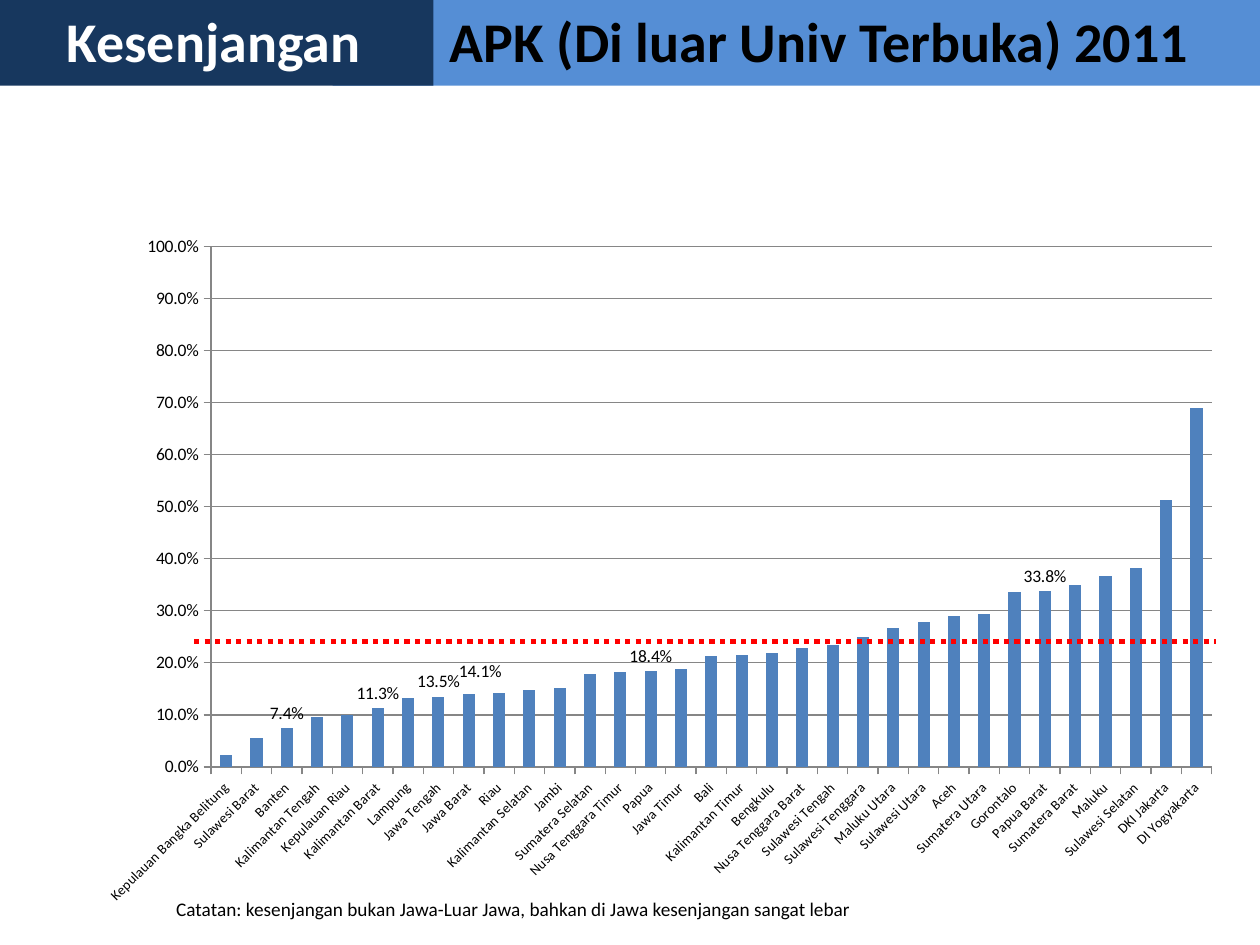
"""Build the slide on higher-education enrolment gaps between provinces."""
from dataclasses import dataclass

from lxml import etree
from pptx import Presentation
from pptx.chart.data import CategoryChartData
from pptx.dml.color import RGBColor
from pptx.enum.chart import XL_CHART_TYPE, XL_LABEL_POSITION, XL_TICK_MARK
from pptx.enum.dml import MSO_LINE
from pptx.enum.shapes import MSO_CONNECTOR, MSO_SHAPE
from pptx.enum.text import MSO_ANCHOR, MSO_AUTO_SIZE, PP_ALIGN
from pptx.oxml.ns import qn
from pptx.util import Inches, Pt

COLUMN_CLUSTERED = XL_CHART_TYPE.COLUMN_CLUSTERED
OUTSIDE_END = XL_LABEL_POSITION.OUTSIDE_END
TICK_OUTSIDE = XL_TICK_MARK.OUTSIDE
DOTTED = MSO_LINE.ROUND_DOT
STRAIGHT = MSO_CONNECTOR.STRAIGHT
RECTANGLE = MSO_SHAPE.RECTANGLE
MIDDLE = MSO_ANCHOR.MIDDLE
FIT_SHAPE = MSO_AUTO_SIZE.SHAPE_TO_FIT_TEXT
LEFT = PP_ALIGN.LEFT
TITLE_ONLY = 5
PERCENT = "0.0%"

ENROLMENT = {
    "Kepulauan Bangka Belitung": 0.023, "Sulawesi Barat": 0.056, "Banten": 0.074,
    "Kalimantan Tengah": 0.096, "Kepulauan Riau": 0.099, "Kalimantan Barat": 0.113,
    "Lampung": 0.133, "Jawa Tengah": 0.135, "Jawa Barat": 0.141, "Riau": 0.142,
    "Kalimantan Selatan": 0.147, "Jambi": 0.151, "Sumatera Selatan": 0.178,
    "Nusa Tenggara Timur": 0.182, "Papua": 0.184, "Jawa Timur": 0.189, "Bali": 0.213,
    "Kalimantan Timur": 0.214, "Bengkulu": 0.219, "Nusa Tenggara Barat": 0.228,
    "Sulawesi Tengah": 0.234, "Sulawesi Tenggara": 0.250, "Maluku Utara": 0.266,
    "Sulawesi Utara": 0.279, "Aceh": 0.290, "Sumatera Utara": 0.294, "Gorontalo": 0.336,
    "Papua Barat": 0.338, "Sumatera Barat": 0.350, "Maluku": 0.367,
    "Sulawesi Selatan": 0.383, "DKI Jakarta": 0.513, "DI Yogyakarta": 0.690,
}
LABELLED = ("Banten", "Kalimantan Barat", "Jawa Tengah", "Jawa Barat", "Papua", "Papua Barat")
LABEL_SHIFTS = {"Jawa Barat": (0.01, -0.01)}


@dataclass(frozen=True)
class Theme:
    """Colours, font and type sizes of the slide."""
    font: str = "Calibri"
    black: RGBColor = RGBColor(0x00, 0x00, 0x00)
    white: RGBColor = RGBColor(0xFF, 0xFF, 0xFF)
    navy: RGBColor = RGBColor(0x17, 0x37, 0x5E)
    sky: RGBColor = RGBColor(0x55, 0x8E, 0xD5)
    column: RGBColor = RGBColor(0x4F, 0x81, 0xBD)
    average: RGBColor = RGBColor(0xFF, 0x00, 0x00)
    grid: RGBColor = RGBColor(0x86, 0x86, 0x86)
    title_size: Pt = Pt(32)
    note_size: Pt = Pt(11)
    chart_size: Pt = Pt(10)
    category_size: Pt = Pt(8)


class SlideBuilder:
    """Draw styled elements on one slide."""

    def __init__(self, slide, theme):
        self.slide = slide
        self.theme = theme

    def style(self, font, size, color, bold=False):
        """Apply the theme font with a size and colour."""
        font.name = self.theme.font
        font.size = size
        font.bold = bold
        font.color.rgb = color

    def band(self, left, width, height, color):
        """Add a plain filled band at the top edge."""
        shape = self.slide.shapes.add_shape(
            RECTANGLE, Inches(left), 0, Inches(width), Inches(height))
        shape.shadow.inherit = False
        shape.fill.solid()
        shape.fill.fore_color.rgb = color
        shape.line.fill.background()

    def title(self, topic, subject, left, top, width, height, indent, tab):
        """Place the two-colour title in front of the bands."""
        shape = self.slide.shapes.title
        shape.left, shape.top = Inches(left), Inches(top)
        shape.width, shape.height = Inches(width), Inches(height)
        shape.element.getparent().append(shape.element)
        frame = shape.text_frame
        frame.word_wrap = True
        frame.auto_size = FIT_SHAPE
        frame.vertical_anchor = MIDDLE
        frame.margin_left = Inches(indent)
        paragraph = frame.paragraphs[0]
        paragraph.alignment = LEFT
        properties = paragraph._p.get_or_add_pPr()
        tabs = etree.SubElement(properties, qn("a:tabLst"))
        etree.SubElement(tabs, qn("a:tab"), pos=str(Inches(tab)), algn="l")
        for text, color in ((topic, self.theme.white), ("\t" + subject, self.theme.black)):
            run = paragraph.add_run()
            run.text = text
            self.style(run.font, self.theme.title_size, color, bold=True)

    def note(self, text, left, top, width, height):
        """Add a one-line note."""
        shape = self.slide.shapes.add_textbox(
            Inches(left), Inches(top), Inches(width), Inches(height))
        frame = shape.text_frame
        frame.word_wrap = False
        frame.auto_size = FIT_SHAPE
        frame.text = text
        run = frame.paragraphs[0].runs[0]
        self.style(run.font, self.theme.note_size, self.theme.black)

    def average_line(self, left, right, top):
        """Add the dotted horizontal line across the columns."""
        connector = self.slide.shapes.add_connector(
            STRAIGHT, Inches(left), Inches(top), Inches(right), Inches(top))
        connector.line.color.rgb = self.theme.average
        connector.line.width = Pt(3)
        connector.line.dash_style = DOTTED
        etree.SubElement(connector.element.spPr, qn("a:effectLst"))

    def column_chart(self, values, labelled, left, top, width, height, plot_area):
        """Add the column chart with labels on chosen categories."""
        data = CategoryChartData(number_format=PERCENT)
        data.categories = list(values)
        data.add_series("Series 1", list(values.values()))
        chart = self.slide.shapes.add_chart(
            COLUMN_CLUSTERED, Inches(left), Inches(top),
            Inches(width), Inches(height), data).chart
        chart.has_legend = False
        chart.has_title = False
        self.style(chart.font, self.theme.chart_size, self.theme.black)
        area = chart.element.chart.plotArea
        for old in area.findall(qn("c:layout")):
            area.remove(old)
        frame = [("layoutTarget", "inner"), ("xMode", "edge"), ("yMode", "edge")]
        self.place(area, 0, frame + list(zip("xywh", plot_area)))
        self.format_axes(chart)
        plot = chart.plots[0]
        plot.gap_width = 150
        plot.vary_by_categories = False
        series = plot.series[0]
        series.format.fill.solid()
        series.format.fill.fore_color.rgb = self.theme.column
        series.data_labels.show_value = False
        names = list(values)
        for name in labelled:
            label = series.points[names.index(name)].data_label
            label.position = OUTSIDE_END
            if name in LABEL_SHIFTS:
                self.place(label._dLbl, 1, zip("xy", LABEL_SHIFTS[name]))

    def place(self, parent, index, settings):
        """Insert a manual layout in fractions of the chart."""
        layout = etree.Element(qn("c:layout"))
        parent.insert(index, layout)
        manual = etree.SubElement(layout, qn("c:manualLayout"))
        for tag, value in settings:
            etree.SubElement(manual, qn("c:" + tag), val=str(value))

    def format_axes(self, chart):
        """Style both axes and the gridlines."""
        value_axis, category_axis = chart.value_axis, chart.category_axis
        value_axis.minimum_scale = 0
        value_axis.maximum_scale = 1
        value_axis.major_unit = 0.1
        value_axis.has_major_gridlines = True
        value_axis.tick_labels.number_format = PERCENT
        value_axis.tick_labels.number_format_is_linked = False
        value_axis.major_gridlines.format.line.color.rgb = self.theme.grid
        sizes = ((value_axis, self.theme.chart_size), (category_axis, self.theme.category_size))
        for axis, size in sizes:
            axis.major_tick_mark = TICK_OUTSIDE
            axis.format.line.color.rgb = self.theme.grid
            self.style(axis.tick_labels.font, size, self.theme.black)
        body = category_axis._element.find(qn("c:txPr")).find(qn("a:bodyPr"))
        body.set("rot", "-2700000")
        body.set("vert", "horz")


def main():
    """Build and save the presentation."""
    presentation = Presentation()
    presentation.slide_width, presentation.slide_height = Inches(10), Inches(7.5)
    slide = presentation.slides.add_slide(presentation.slide_layouts[TITLE_ONLY])
    theme = Theme()
    builder = SlideBuilder(slide, theme)
    builder.column_chart(ENROLMENT, LABELLED, 0.67, 1.79, 9.13, 5.51, (0.11, 0.03, 0.87, 0.75))
    builder.average_line(1.54, 9.65, 5.09)
    builder.note("Catatan: kesenjangan bukan Jawa-Luar Jawa, bahkan di Jawa kesenjangan sangat lebar",
                 1.3, 7.07, 6.3, 0.29)
    builder.band(2.64, 7.36, 0.68, theme.sky)
    builder.band(0, 3.44, 0.68, theme.navy)
    builder.title("Kesenjangan", "APK (Di luar Univ Terbuka) 2011",
                  -0.03, 0, 10.04, 0.64, indent=0.56, tab=3.04)
    presentation.save("out.pptx")


if __name__ == "__main__":
    main()
